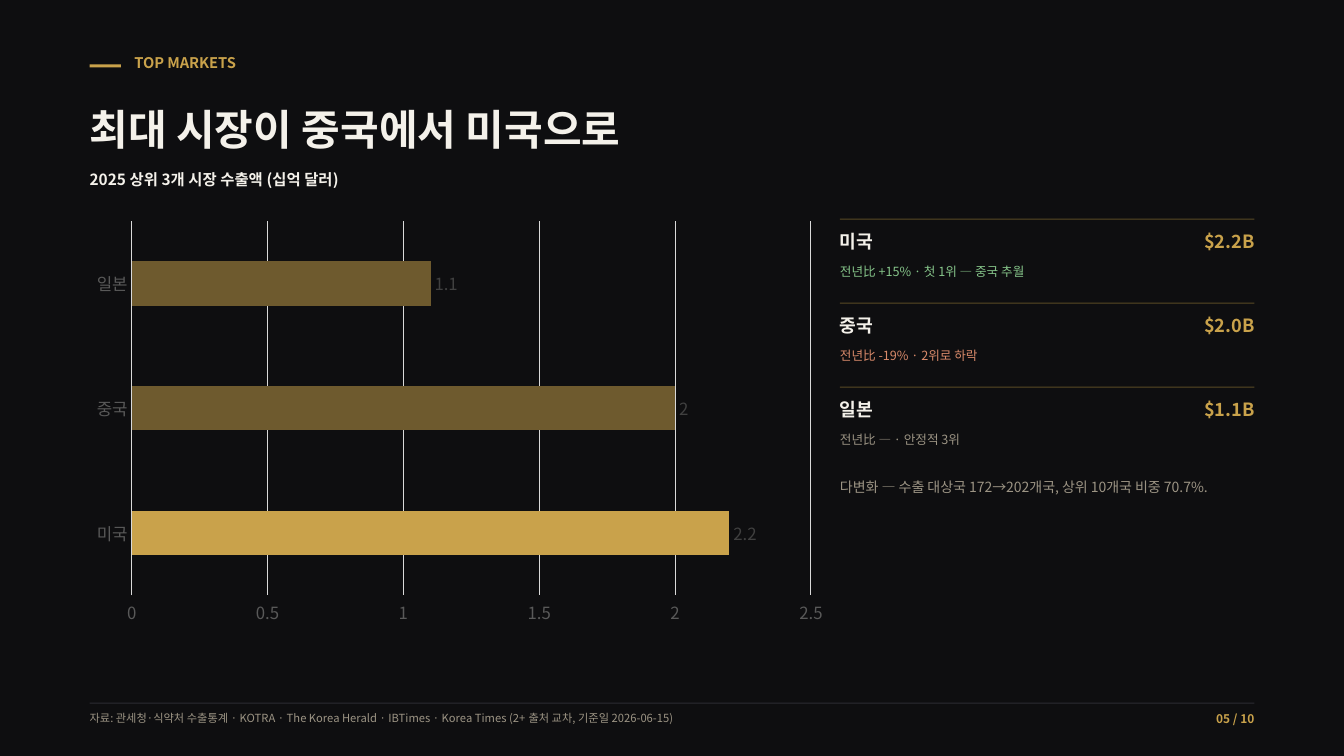
from dataclasses import dataclass

from lxml import etree
from pptx import Presentation
from pptx.chart.data import CategoryChartData
from pptx.dml.color import RGBColor
from pptx.enum.chart import XL_CHART_TYPE, XL_LABEL_POSITION, XL_TICK_MARK
from pptx.enum.shapes import MSO_SHAPE
from pptx.enum.text import MSO_AUTO_SIZE, PP_ALIGN
from pptx.oxml.ns import qn
from pptx.util import Inches, Pt

RECT = MSO_SHAPE.RECTANGLE
BAR = XL_CHART_TYPE.BAR_CLUSTERED
OUTSIDE_END = XL_LABEL_POSITION.OUTSIDE_END
NO_TICK = XL_TICK_MARK.NONE
LEFT, RIGHT = PP_ALIGN.LEFT, PP_ALIGN.RIGHT
FIT_SHAPE = MSO_AUTO_SIZE.SHAPE_TO_FIT_TEXT


@dataclass(frozen=True)
class Theme:
    font: str = "Noto Sans CJK KR"
    bg: str = "0E0E10"
    gold: str = "C9A24B"
    dim_gold: str = "6E5A2E"
    divider: str = "5A4A24"
    ivory: str = "F4F1EA"
    muted: str = "9C9484"
    up: str = "86C58A"
    down: str = "D98A6A"
    footer_rule: str = "2C2C32"
    grid: str = "D9D9D9"
    axis_text: str = "595959"
    value_text: str = "404040"
    title: float = 30
    market: float = 13
    chart: float = 12
    subtitle: float = 11
    kicker: float = 10.5
    note: float = 10
    detail: float = 9
    page: float = 8.5
    source: float = 8


T = Theme()

KICKER = "TOP MARKETS"
TITLE = "최대 시장이 중국에서 미국으로"
SUBTITLE = "2025 상위 3개 시장 수출액 (십억 달러)"
# name, exports in billion dollars, yearly change, remark, remark colour
MARKETS = [
    ("미국", 2.2, "+15%", "첫 1위 — 중국 추월", T.up),
    ("중국", 2.0, "-19%", "2위로 하락", T.down),
    ("일본", 1.1, "—", "안정적 3위", T.muted),
]
NOTE = "다변화 — 수출 대상국 172→202개국, 상위 10개국 비중 70.7%."
SOURCE = ("자료: 관세청·식약처 수출통계 · KOTRA · The Korea Herald · IBTimes · "
          "Korea Times (2+ 출처 교차, 기준일 2026-06-15)")
PAGE = "05 / 10"

SLIDE_W, SLIDE_H = 13.33, 7.5
MARGIN = SLIDE_W / 15
CONTENT_W = SLIDE_W - 2 * MARGIN
PANEL_X = SLIDE_W * 0.625
PANEL_W = SLIDE_W - MARGIN - PANEL_X
PANEL_Y, ROW_H = 2.17, SLIDE_H / 9
FOOTER_Y = 6.97
PAGE_W = 0.97
HAIRLINE = 0.01


def rgb(value):
    return RGBColor.from_string(value)


def set_font(font, size, color, bold=False):
    font.name = T.font
    font.size = Pt(size)
    font.bold = bold
    font.color.rgb = rgb(color)


def add_text(slide, text, x, y, w, h, *, size, color, bold=False,
             align=LEFT, wrap=True):
    tf = slide.shapes.add_textbox(*map(Inches, (x, y, w, h))).text_frame
    tf.margin_left = tf.margin_right = tf.margin_top = tf.margin_bottom = 0
    tf.word_wrap = wrap
    tf.auto_size = FIT_SHAPE
    p = tf.paragraphs[0]
    p.alignment = align
    r = p.add_run()
    r.text = text
    set_font(r.font, size, color, bold)
    east_asian = etree.Element(qn("a:ea"), typeface=T.font)
    r.font._element.find(qn("a:latin")).addnext(east_asian)


def add_bar(slide, x, y, w, h, color):
    sp = slide.shapes.add_shape(RECT, *map(Inches, (x, y, w, h)))
    sp.shadow.inherit = False
    sp.fill.solid()
    sp.fill.fore_color.rgb = rgb(color)
    sp.line.fill.background()


def add_header(slide):
    add_bar(slide, MARGIN, 0.64, 0.31, 0.03, T.gold)
    add_text(slide, KICKER, SLIDE_W / 10, 0.53, 1.03, 0.18,
             size=T.kicker, color=T.gold, bold=True, wrap=False)
    add_text(slide, TITLE, MARGIN, 1.03, CONTENT_W, 0.5,
             size=T.title, color=T.ivory, bold=True)
    add_text(slide, SUBTITLE, MARGIN, 1.69, 7.5, 0.19,
             size=T.subtitle, color=T.ivory, bold=True)


def add_market_chart(slide):
    data = CategoryChartData()
    data.categories = [market[0] for market in MARKETS]
    data.add_series("Series 1", [market[1] for market in MARKETS])
    box = map(Inches, (0.81, 2.11, 7.5, 4.17))
    chart = slide.shapes.add_chart(BAR, *box, data).chart
    chart.has_legend = chart.has_title = False
    set_font(chart.font, T.chart, T.axis_text)

    cat_axis, val_axis = chart.category_axis, chart.value_axis
    for axis in (cat_axis, val_axis):
        axis.major_tick_mark = axis.minor_tick_mark = NO_TICK
        set_font(axis.tick_labels.font, T.chart, T.axis_text)
    val_axis.minimum_scale, val_axis.maximum_scale = 0, 2.5
    val_axis.major_unit = 0.5
    val_axis.has_major_gridlines = True
    val_axis.format.line.fill.background()
    for line in (cat_axis.format.line, val_axis.major_gridlines.format.line):
        line.color.rgb = rgb(T.grid)
        line.width = Pt(0.75)

    plot = chart.plots[0]
    plot.gap_width = 182
    plot.vary_by_categories = False
    series = plot.series[0]
    for i in range(len(MARKETS)):
        fill = series.points[i].format.fill
        fill.solid()
        fill.fore_color.rgb = rgb(T.dim_gold if i else T.gold)
    labels = series.data_labels
    labels.show_value = True
    labels.position = OUTSIDE_END
    set_font(labels.font, T.chart, T.value_text)


def add_market_panel(slide):
    for i, (name, value, change, remark, color) in enumerate(MARKETS):
        y = PANEL_Y + i * ROW_H
        add_bar(slide, PANEL_X, y, PANEL_W, HAIRLINE, T.divider)
        add_text(slide, name, PANEL_X, y + 0.11, 3.14, 0.22,
                 size=T.market, color=T.ivory, bold=True)
        add_text(slide, f"${value:.1f}B", PANEL_X, y + 0.11, PANEL_W, 0.22,
                 size=T.market, color=T.gold, bold=True, align=RIGHT)
        add_text(slide, f"전년比 {change} · {remark}", PANEL_X, y + 0.45,
                 PANEL_W, 0.15, size=T.detail, color=color)
    add_text(slide, NOTE, PANEL_X, PANEL_Y + len(MARKETS) * ROW_H + 0.08,
             PANEL_W, 0.17, size=T.note, color=T.muted)


def add_footer(slide):
    add_bar(slide, MARGIN, FOOTER_Y, CONTENT_W, HAIRLINE, T.footer_rule)
    add_text(slide, SOURCE, MARGIN, FOOTER_Y + 0.09, CONTENT_W - PAGE_W, 0.13,
             size=T.source, color=T.muted)
    add_text(slide, PAGE, SLIDE_W - MARGIN - PAGE_W, FOOTER_Y + 0.09, PAGE_W,
             0.14, size=T.page, color=T.gold, bold=True, align=RIGHT)


def main():
    prs = Presentation()
    prs.slide_width, prs.slide_height = Inches(SLIDE_W), Inches(SLIDE_H)
    slide = prs.slides.add_slide(prs.slide_layouts[6])
    slide.background.fill.solid()
    slide.background.fill.fore_color.rgb = rgb(T.bg)
    add_header(slide)
    add_market_panel(slide)
    add_footer(slide)
    add_market_chart(slide)
    prs.save("out.pptx")


if __name__ == "__main__":
    main()
